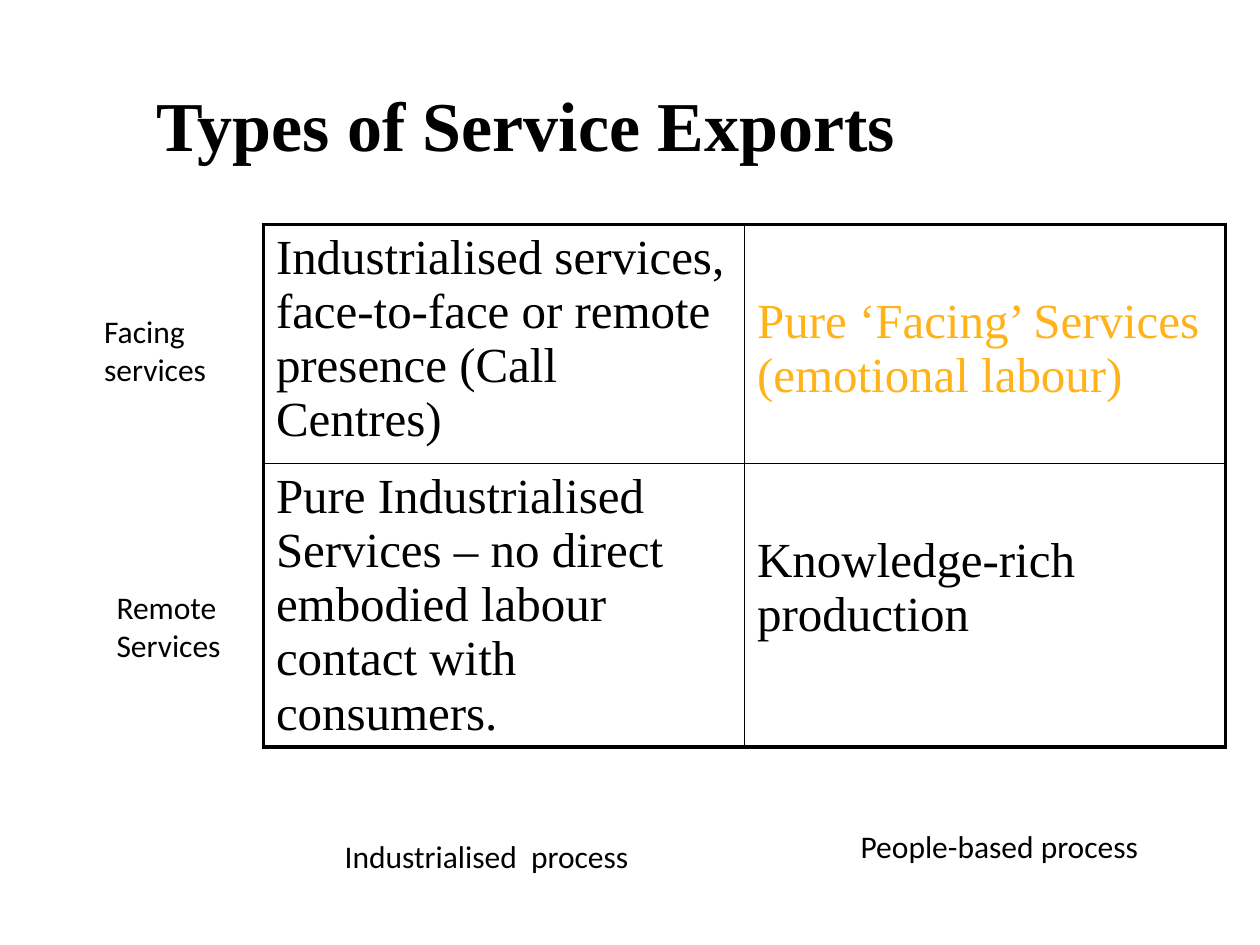
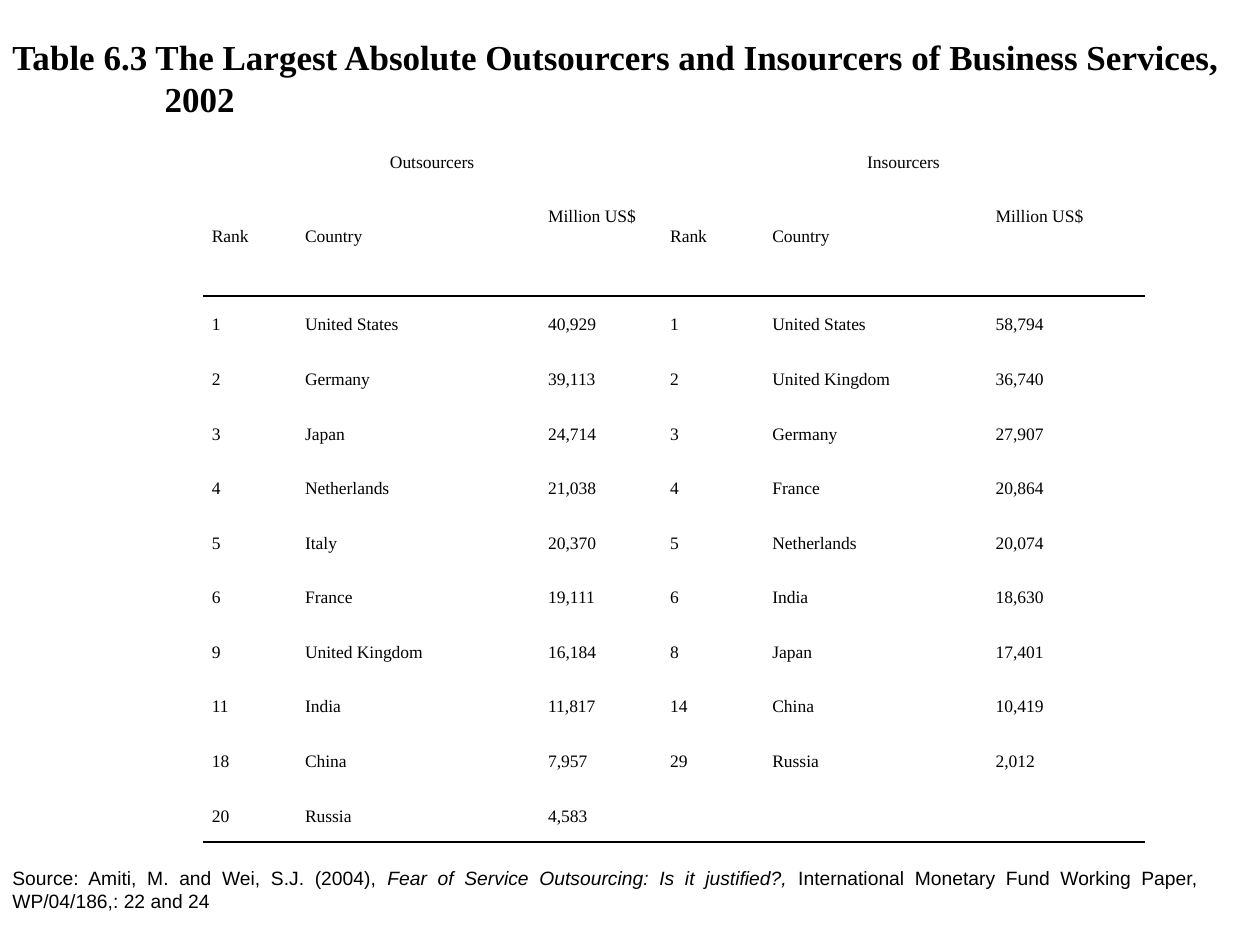
import lxml.etree
import pptx
import pptx.dml.color
import pptx.enum.text
import pptx.oxml.ns
import pptx.util

Cm, Pt = pptx.util.Cm, pptx.util.Pt
ALIGN, ANCHOR = pptx.enum.text.PP_ALIGN, pptx.enum.text.MSO_ANCHOR

# Content: matrix of service exports
EXPORTS_TITLE = "Types of Service Exports"
EXPORT_TYPES = [
    ["Industrialised services, face-to-face or remote presence (Call Centres)",
     "Pure ‘Facing’ Services (emotional labour)"],
    ["Pure Industrialised Services – no direct embodied labour contact with consumers.",
     "Knowledge-rich production"],
]
HIGHLIGHTED_TYPE = (0, 1)
AXIS_LABELS = [  # lines, left, top, width, height in cm
    (["Facing", "services"], 1.85, 6.17, 3.02, 1.78),
    (["Remote", "Services"], 2.1, 11.73, 3.12, 1.78),
    (["Industrialised  process"], 6.7, 16.74, 7.01, 1.02),
    (["People-based process"], 17.1, 16.54, 6.83, 1.02),
]

# Content: ranking of outsourcers and insourcers
RANKING_TITLE = "Table 6.3 The Largest Absolute Outsourcers and Insourcers of Business Services,"
RANKING_YEAR = "2002"
GROUPS = ["Outsourcers", "Insourcers"]
HEADINGS = ["Rank", "Country", "Million US$"]
OUTSOURCERS = [
    ("1", "United States", "40,929"), ("2", "Germany", "39,113"),
    ("3", "Japan", "24,714"), ("4", "Netherlands", "21,038"),
    ("5", "Italy", "20,370"), ("6", "France", "19,111"),
    ("9", "United Kingdom", "16,184"), ("11", "India", "11,817"),
    ("18", "China", "7,957"), ("20", "Russia", "4,583"),
]
INSOURCERS = [
    ("1", "United States", "58,794"), ("2", "United Kingdom", "36,740"),
    ("3", "Germany", "27,907"), ("4", "France", "20,864"),
    ("5", "Netherlands", "20,074"), ("6", "India", "18,630"),
    ("8", "Japan", "17,401"), ("14", "China", "10,419"),
    ("29", "Russia", "2,012"),
]
SOURCE = [
    ("Source: Amiti, M. and Wei, S.J. (2004), ", False),
    ("Fear of Service Outsourcing: Is it justified?,", True),
    (" International Monetary Fund Working Paper, WP/04/186,: 22 and 24", False),
]

# Shared look
BLACK = pptx.dml.color.RGBColor(0x00, 0x00, 0x00)
AMBER = pptx.dml.color.RGBColor(0xFF, 0xB3, 0x1B)
SERIF, LABEL_FONT, SOURCE_FONT = "Times New Roman", "Calibri", "Arial"
THICK, THIN = 2.25, 1


def write(frame, paragraphs, font=SERIF, size=18, color=BLACK, bold=False,
          align=ALIGN.LEFT, line_spacing=None):
    """Fill a frame; a paragraph is a string or a list of (text, italic)."""
    frame.word_wrap = True
    for number, content in enumerate(paragraphs):
        paragraph = frame.add_paragraph() if number else frame.paragraphs[0]
        paragraph.alignment = align
        paragraph.line_spacing = line_spacing
        runs = [(content, False)] if isinstance(content, str) else content
        for text, italic in runs:
            run = paragraph.add_run()
            run.text = text
            run.font.name, run.font.size = font, Pt(size)
            run.font.bold, run.font.italic = bold, italic
            run.font.color.rgb = color


def add_text(slide, paragraphs, left, top, width, height, anchor=ANCHOR.TOP, **look):
    frame = slide.shapes.add_textbox(Cm(left), Cm(top), Cm(width), Cm(height)).text_frame
    frame.vertical_anchor = anchor
    write(frame, paragraphs, **look)
    return frame


def add_grid(slide, left, top, widths, heights):
    table = slide.shapes.add_table(len(heights), len(widths), Cm(left), Cm(top),
                                   Cm(sum(widths)), Cm(sum(heights))).table
    table.first_row = table.horz_banding = False
    for column, width in zip(table.columns, widths):
        column.width = Cm(width)
    for row, height in zip(table.rows, heights):
        row.height = Cm(height)
    return table


def style_cell(cell, **borders):
    """Clear the fill and draw the given edges (L, R, T, B in points)."""
    properties = cell._tc.get_or_add_tcPr()
    qn = pptx.oxml.ns.qn
    for edge in "LRTB":
        width = borders.get(edge, 0)
        line = lxml.etree.SubElement(properties, qn("a:ln" + edge), w=str(int(Pt(width))))
        if width:
            fill = lxml.etree.SubElement(line, qn("a:solidFill"))
            lxml.etree.SubElement(fill, qn("a:srgbClr"), val=str(BLACK))
        else:
            lxml.etree.SubElement(line, qn("a:noFill"))
    cell.fill.background()


def build_exports(slide):
    matrix = add_grid(slide, 5.31, 4.52, [9.7, 9.7], [4.82, 5.72])
    for r, row in enumerate(EXPORT_TYPES):
        for c, export_type in enumerate(row):
            cell = matrix.cell(r, c)
            style_cell(cell, L=THIN if c else THICK, R=THICK if c else THIN,
                       T=THIN if r else THICK, B=THICK if r else THIN)
            if c:  # the right column starts one line lower
                cell.margin_top = Cm(1.42)
            write(cell.text_frame, [export_type], size=28,
                  color=AMBER if (r, c) == HIGHLIGHTED_TYPE else BLACK)
    for lines, *place in AXIS_LABELS:
        add_text(slide, lines, *place, font=LABEL_FONT)
    add_text(slide, [EXPORTS_TITLE], 2.9, 1.52, 15.93, 1.96, size=40, bold=True)


def build_ranking(slide):
    # Rows: group names, column headings, then both rankings side by side
    rows = [[GROUPS[0], "", "", GROUPS[1], "", ""], HEADINGS * 2]
    for place, outsourcer in enumerate(OUTSOURCERS):
        insourcer = INSOURCERS[place] if place < len(INSOURCERS) else ("", "", "")
        rows.append([*outsourcer, *insourcer])
    heights = [1.1, 2.18] + [1.1] * len(OUTSOURCERS)
    ranking = add_grid(slide, 4.09, 2.69, [1.88, 4.9, 2.46, 2.06, 4.5, 3.2], heights)
    for first in (0, 3):
        ranking.cell(0, first).merge(ranking.cell(0, first + 2))
    for r, row in enumerate(rows):
        for c, text in enumerate(row):
            cell = ranking.cell(r, c)
            style_cell(cell, T=THIN if r == 2 else 0,
                       B=THIN if r in (1, len(rows) - 1) else 0)
            cell.margin_left = cell.margin_right = Cm(0.18)
            # Rank and Country sit lower than the amount heading
            cell.margin_top = Cm(0.39 if r == 1 and c % 3 < 2 else 0)
            cell.margin_bottom = 0
            if text:
                write(cell.text_frame, [text], size=10, line_spacing=2.0,
                      align=ALIGN.JUSTIFY if r else ALIGN.CENTER)

    # Title with the year indented, and the source line
    title = add_text(slide, [RANKING_TITLE, RANKING_YEAR], 0, 0.58, 25.4, 1.96,
                     anchor=ANCHOR.MIDDLE, size=20, bold=True, align=ALIGN.JUSTIFY)
    title.paragraphs[1]._p.get_or_add_pPr().set("marL", str(int(Cm(3.07))))
    add_text(slide, [SOURCE], 0, 17.32, 24.4, 1.2, anchor=ANCHOR.MIDDLE,
             font=SOURCE_FONT, size=11, align=ALIGN.JUSTIFY)


def main():
    deck = pptx.Presentation()
    deck.slide_width, deck.slide_height = Cm(25.4), Cm(19.05)
    for build in (build_exports, build_ranking):
        build(deck.slides.add_slide(deck.slide_layouts[6]))
    deck.save("out.pptx")


if __name__ == "__main__":
    main()
